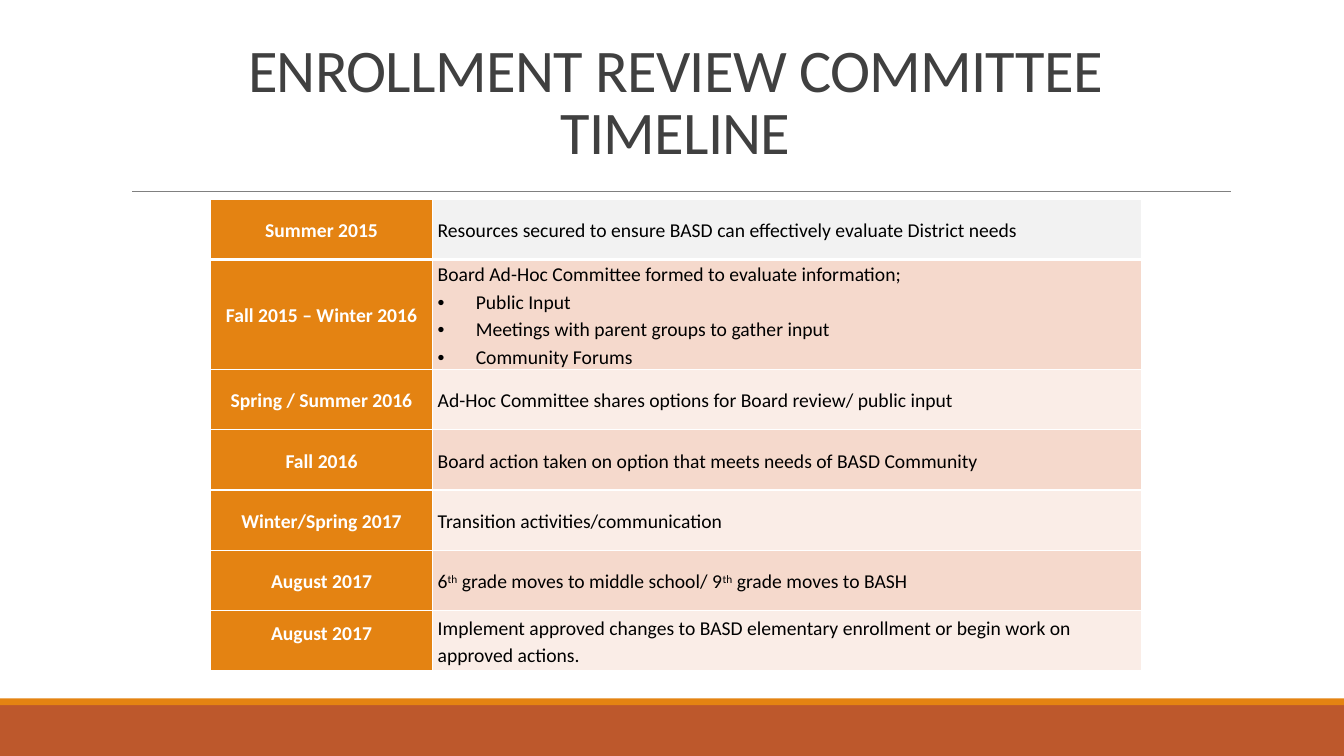
from dataclasses import dataclass

from lxml.etree import SubElement
from pptx import Presentation
from pptx.dml.color import RGBColor as Rgb
from pptx.enum.shapes import MSO_CONNECTOR as Connector, MSO_SHAPE as Shape
from pptx.enum.text import MSO_ANCHOR as Anchor, MSO_AUTO_SIZE as AutoSize, PP_ALIGN as Align
from pptx.oxml import parse_xml
from pptx.oxml.ns import nsdecls, qn
from pptx.util import Cm, Pt


@dataclass(frozen=True)
class Theme:
    font: str = "Calibri"
    title_size: float = 43.2
    body_size: float = 14
    title: str = "404040"
    rule: str = "808080"
    orange: str = "E48312"
    rust: str = "BD582C"
    white: str = "FFFFFF"
    black: str = "000000"
    first_fill: str = "F2F2F2"
    bands: tuple = ("FAEDE7", "F5D9CC")


THEME = Theme()
WIDTH, HEIGHT = 33.87, 19.05
TITLE = "ENROLLMENT REVIEW COMMITTEE\vTIMELINE"
BULLET, SUPER = "•", "^"  # a pair of SUPER marks encloses superscript text
TIMELINE = [
    ("Summer 2015", ["Resources secured to ensure BASD can effectively evaluate District needs"]),
    ("Fall 2015 – Winter 2016", [
        "Board Ad-Hoc Committee formed to evaluate information;",
        "•Public Input",
        "•Meetings with parent groups to gather input",
        "•Community Forums",
    ]),
    ("Spring / Summer 2016", ["Ad-Hoc Committee shares options for Board review/ public input"]),
    ("Fall 2016", ["Board action taken on option that meets needs of BASD Community"]),
    ("Winter/Spring 2017", ["Transition activities/communication"]),
    ("August 2017", ["6^th^ grade moves to middle school/ 9^th^ grade moves to BASH"]),
    ("August 2017", ["Implement approved changes to BASD elementary enrollment "
                     "or begin work on approved actions."]),
]


def apply(target, formats):
    for name, value in formats.items():
        setattr(target, name, value)


def style_font(font, size, color, bold=False):
    apply(font, {"name": THEME.font, "size": Pt(size), "bold": bold})
    font.color.rgb = Rgb.from_string(color)


def add_band(page, left, top, width, height, color):
    band = page.shapes.add_shape(Shape.RECTANGLE, Cm(left), Cm(top), Cm(width), Cm(height))
    band.shadow.inherit = False
    band.fill.solid()
    band.fill.fore_color.rgb = Rgb.from_string(color)
    band.line.fill.background()


def add_footer(page, left, top, width, height):
    stripe = 0.17
    add_band(page, left, top + stripe, width, height - stripe, THEME.rust)
    add_band(page, left, top, width, stripe, THEME.orange)


def add_heading(page, left, top, width, height):
    """Place the title and the thin rule below it."""
    title = page.shapes.title
    apply(title, {"left": Cm(left), "top": Cm(top), "width": Cm(width), "height": Cm(height)})
    frame = title.text_frame
    frame.text = TITLE
    apply(frame, {"word_wrap": True, "auto_size": AutoSize.NONE, "vertical_anchor": Anchor.BOTTOM})
    para = frame.paragraphs[0]
    apply(para, {"alignment": Align.CENTER, "line_spacing": 0.85})
    for span in para.runs:
        style_font(span.font, THEME.title_size, THEME.title)
        span.font._element.set("spc", "-50")

    start, level = left + 0.28, top + height + 0.51
    rule = page.shapes.add_connector(
        Connector.STRAIGHT, Cm(start), Cm(level), Cm(start + 27.69), Cm(level))
    rule.line.width = Pt(0.5)
    rule.line.color.rgb = Rgb.from_string(THEME.rule)
    SubElement(rule._element.spPr, qn("a:effectLst"))


def write_para(para, text, color, bold, alignment):
    apply(para, {"alignment": alignment, "line_spacing": 1.15})
    if text.startswith(BULLET):
        text = text[len(BULLET):]
        props = para._p.get_or_add_pPr()
        indent = Cm(0.96)
        props.set("marL", str(indent))
        props.set("indent", str(-indent))
        SubElement(props, qn("a:buFont"), typeface="Arial")
        SubElement(props, qn("a:buChar"), char=BULLET)
    for index, part in enumerate(text.split(SUPER)):
        span = para.add_run()
        span.text = part
        style_font(span.font, THEME.body_size, color, bold)
        if index % 2:
            span.font._element.set("baseline", "30000")


def set_borders(cell, widths):
    props = cell._tc.get_or_add_tcPr()
    for index, (side, width) in enumerate(widths.items()):
        props.insert(index, parse_xml(
            f'<a:ln{side} {nsdecls("a")} w="{Pt(width)}"><a:solidFill>'
            f'<a:srgbClr val="{THEME.white}"/></a:solidFill></a:ln{side}>'))


def fill_cell(cell, lines, fill, color, bold=False, alignment=Align.LEFT, thick=None):
    """Write lines into a cell; thick names the side with a heavy border."""
    apply(cell, {"vertical_anchor": Anchor.MIDDLE, "margin_left": Cm(0.13),
                 "margin_right": Cm(0.13), "margin_top": 0, "margin_bottom": 0})
    cell.fill.solid()
    cell.fill.fore_color.rgb = Rgb.from_string(fill)
    set_borders(cell, {side: 3 if side == thick else 1 for side in "LRTB"})
    frame = cell.text_frame
    for index, line in enumerate(lines):
        para = frame.add_paragraph() if index else frame.paragraphs[0]
        write_para(para, line, color, bold, alignment)


def add_timeline(page, left, top, width, height):
    date_width, row_height = 5.59, 1.52
    tall_height = height - row_height * (len(TIMELINE) - 1)
    table = page.shapes.add_table(
        len(TIMELINE), 2, Cm(left), Cm(top), Cm(width), Cm(height)).table
    apply(table, {"first_row": False, "horz_banding": False})
    table.columns[0].width = Cm(date_width)
    table.columns[1].width = Cm(width - date_width)
    for index, (date, lines) in enumerate(TIMELINE):
        table.rows[index].height = Cm(tall_height if len(lines) > 1 else row_height)
        fill = THEME.bands[index % 2] if index else THEME.first_fill
        thick = {0: "B", 1: "T"}.get(index)
        fill_cell(table.cell(index, 0), [date], THEME.orange, THEME.white,
                  True, Align.CENTER, thick)
        fill_cell(table.cell(index, 1), lines, fill, THEME.black, thick=thick)
    table.cell(len(TIMELINE) - 1, 0).margin_bottom = Cm(0.45)


def main():
    deck = Presentation()
    apply(deck, {"slide_width": Cm(WIDTH), "slide_height": Cm(HEIGHT)})
    page = deck.slides.add_slide(deck.slide_layouts[5])
    add_footer(page, 0, 17.6, WIDTH, HEIGHT - 17.6)
    add_heading(page, 3.05, 0.79, 27.94, 3.53)
    add_timeline(page, 5.31, 5.02, 23.47, 11.87)
    deck.save("out.pptx")


if __name__ == "__main__":
    main()
